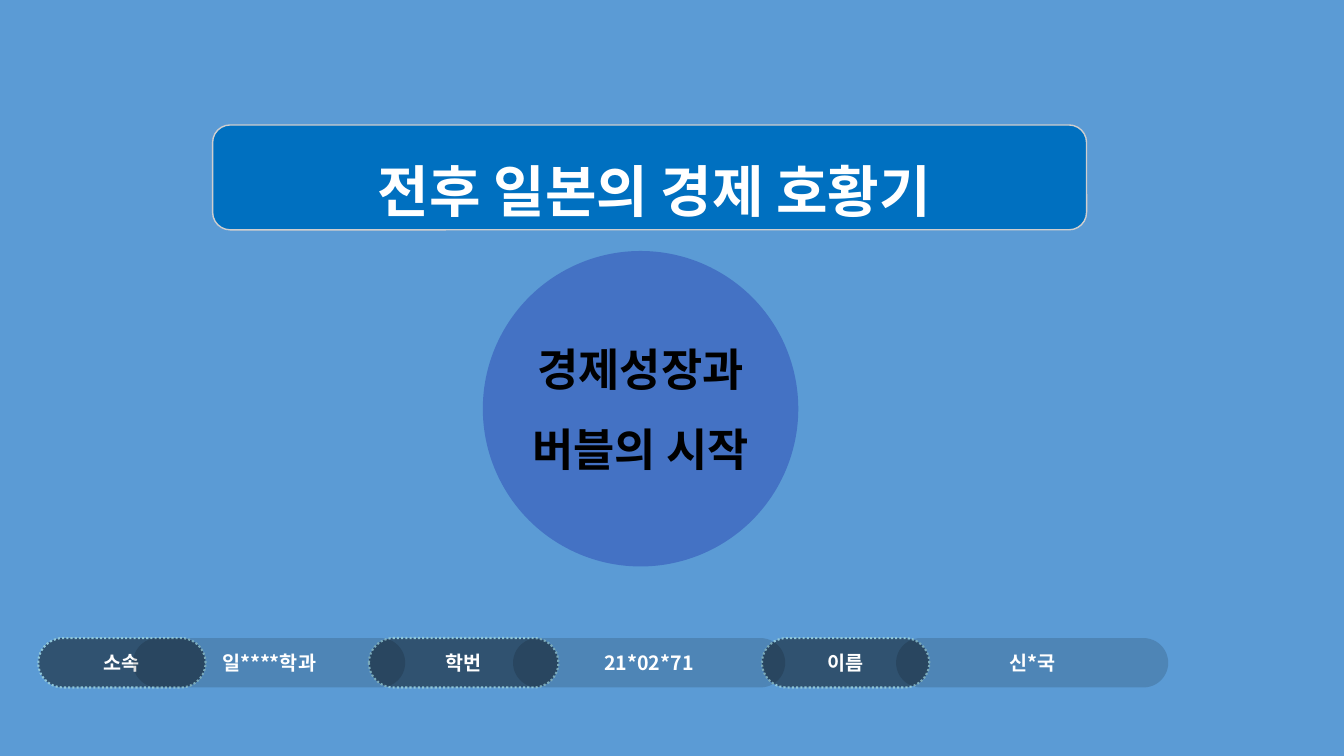
import dataclasses
import typing

import lxml.etree
import pptx
import pptx.dml.color
import pptx.enum.dml
import pptx.enum.shapes
import pptx.enum.text
import pptx.oxml.ns
import pptx.util

FONT = "Noto Sans CJK KR"
COLORS = {
    "background": "5B9BD5",
    "banner": "0070C0",
    "banner_edge": "D0CECE",
    "circle": "4472C4",
    "pill": "000000",
    "pill_edge": "8FC6D9",
    "light": "FFFFFF",
    "dark": "000000",
}
SHAPES = pptx.enum.shapes.MSO_SHAPE
DOTTED = pptx.enum.dml.MSO_LINE.ROUND_DOT
PILL_TOP, PILL_HEIGHT = 455.76, 35.28
VALUE_WIDTH = 194.4


@dataclasses.dataclass
class Panel:
    left: float
    top: float
    width: float
    height: float
    kind: SHAPES
    fill: str
    opacity: int = 100
    edge: str = ""
    edge_width: float = 1
    dash: typing.Any = None
    text: str = ""


@dataclasses.dataclass
class Heading:
    left: float
    top: float
    width: float
    height: float
    lines: list[str]
    size: float
    color: str


@dataclasses.dataclass
class Field:
    label: str
    label_left: float
    label_width: float
    value: str
    value_left: float


def rgb(name: str) -> pptx.dml.color.RGBColor:
    return pptx.dml.color.RGBColor.from_string(COLORS[name])


def apply(target: typing.Any, formats: dict[str, typing.Any]) -> None:
    for key, value in formats.items():
        setattr(target, key, value)


def write(frame, lines: list[str], size: float, color: str, spacing: float) -> None:
    for index, line in enumerate(lines):
        paragraph = frame.paragraphs[0] if index == 0 else frame.add_paragraph()
        apply(paragraph, {"alignment": pptx.enum.text.PP_ALIGN.CENTER, "line_spacing": spacing})
        run = paragraph.add_run()
        run.text = line
        apply(run.font, {"name": FONT, "size": pptx.util.Pt(size), "bold": True})
        run.font.color.rgb = rgb(color)
        east_asian = pptx.oxml.ns.qn("a:ea")
        lxml.etree.SubElement(run.font._element, east_asian, typeface=FONT)


def draw_panel(slide, panel: Panel) -> None:
    box = map(pptx.util.Pt, (panel.left, panel.top, panel.width, panel.height))
    shape = slide.shapes.add_shape(panel.kind, *box)
    shape.shadow.inherit = False
    shape.fill.solid()
    shape.fill.fore_color.rgb = rgb(panel.fill)
    if panel.opacity < 100:
        color = shape._element.spPr.find(".//" + pptx.oxml.ns.qn("a:srgbClr"))
        alpha = pptx.oxml.ns.qn("a:alpha")
        lxml.etree.SubElement(color, alpha, val=str(panel.opacity * 1000))
    if panel.edge:
        shape.line.color.rgb = rgb(panel.edge)
        apply(shape.line, {"width": pptx.util.Pt(panel.edge_width), "dash_style": panel.dash})
    else:
        shape.line.fill.background()
    if panel.text:
        shape.adjustments[0] = 0.5
        shape.text_frame.vertical_anchor = pptx.enum.text.MSO_ANCHOR.MIDDLE
        write(shape.text_frame, [panel.text], 14, "light", 1.0)


def draw_heading(slide, heading: Heading) -> None:
    box = map(pptx.util.Pt, (heading.left, heading.top, heading.width, heading.height))
    frame = slide.shapes.add_textbox(*box).text_frame
    apply(frame, {
        "word_wrap": True,
        "auto_size": pptx.enum.text.MSO_AUTO_SIZE.SHAPE_TO_FIT_TEXT,
    })
    write(frame, heading.lines, heading.size, heading.color, 1.5)


def draw_fields(slide, fields: list[Field]) -> None:
    for field in fields:
        draw_panel(slide, Panel(
            field.label_left, PILL_TOP, field.label_width, PILL_HEIGHT,
            SHAPES.ROUNDED_RECTANGLE, "pill", 47, "pill_edge", 1.5, DOTTED, field.label,
        ))
    for field in fields:
        draw_panel(slide, Panel(
            field.value_left, PILL_TOP, VALUE_WIDTH, PILL_HEIGHT,
            SHAPES.ROUNDED_RECTANGLE, "pill", 14, text=field.value,
        ))


def main() -> None:
    deck = pptx.Presentation()
    apply(deck, {"slide_width": pptx.util.Pt(960), "slide_height": pptx.util.Pt(540)})
    slide = deck.slides.add_slide(deck.slide_layouts[6])
    slide.background.fill.solid()
    slide.background.fill.fore_color.rgb = rgb("background")

    draw_panel(slide, Panel(151.92, 89.28, 624.24, 74.88, SHAPES.ROUNDED_RECTANGLE,
                            "banner", edge="banner_edge"))
    draw_heading(slide, Heading(192.24, 84.24, 559.44, 70.56,
                                ["전후 일본의 경제 호황기 "], 40, "light"))
    draw_panel(slide, Panel(344.88, 179.28, 225.36, 225.36, SHAPES.OVAL, "circle"))
    draw_heading(slide, Heading(200.88, 221.04, 513.36, 123.84,
                                ["경제성장과", "버블의 시작"], 32, "dark"))
    draw_fields(slide, [
        Field("소속", 27.36, 119.52, "일****학과", 95.04),
        Field("학번", 263.52, 135.36, "21*02*71", 366.48),
        Field("이름", 544.32, 119.52, "신*국", 640.08),
    ])
    deck.save("out.pptx")


if __name__ == "__main__":
    main()
